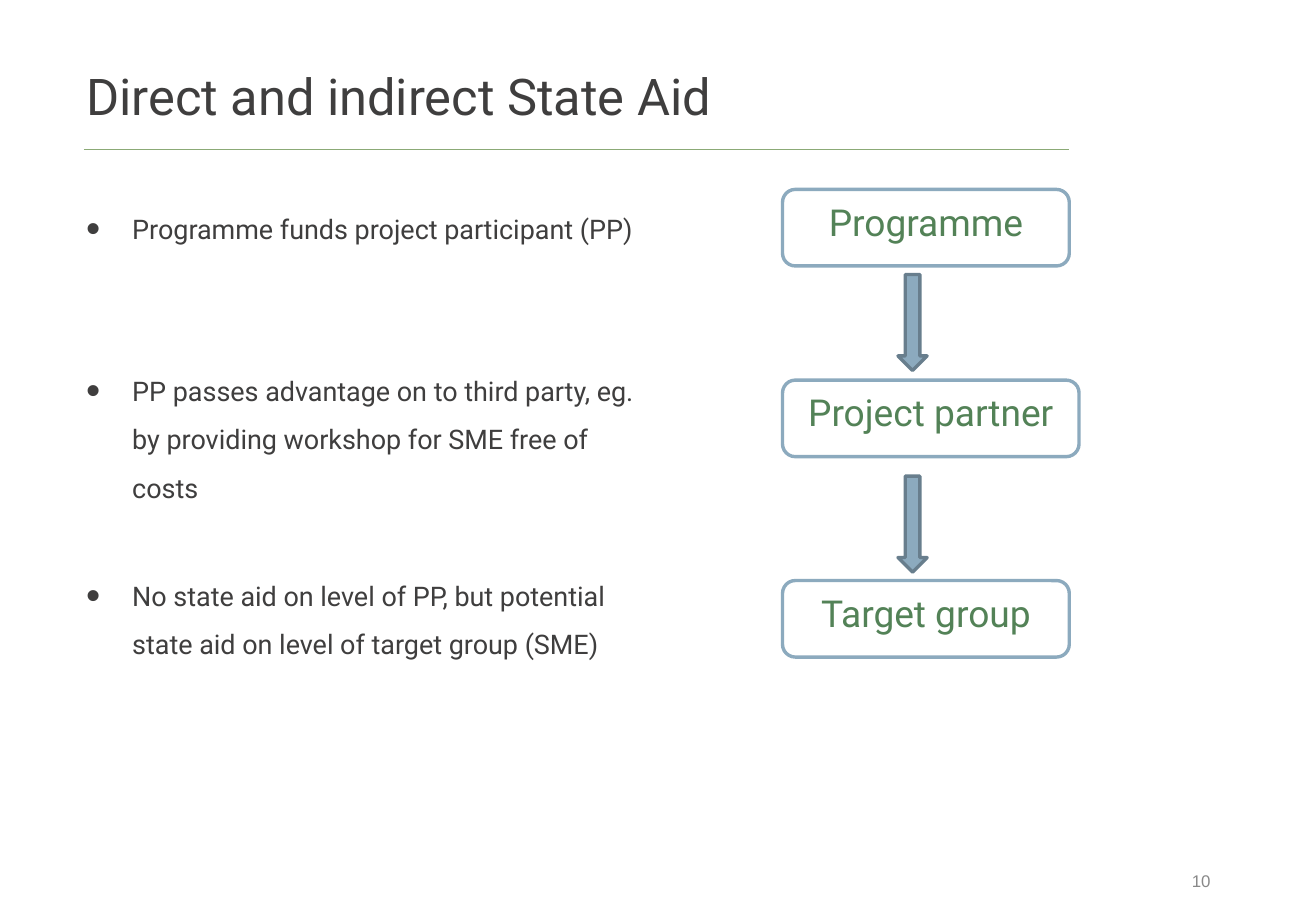
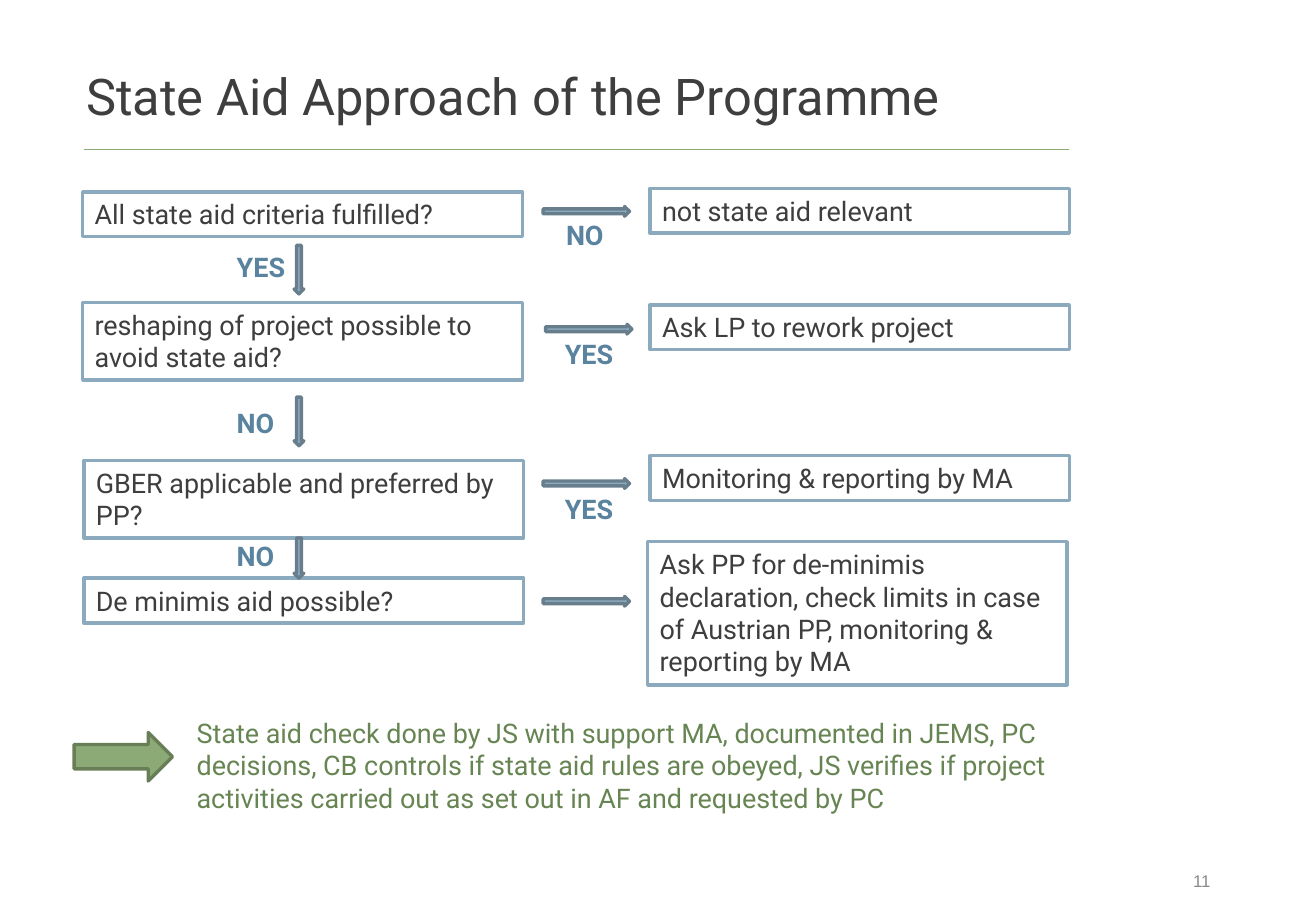
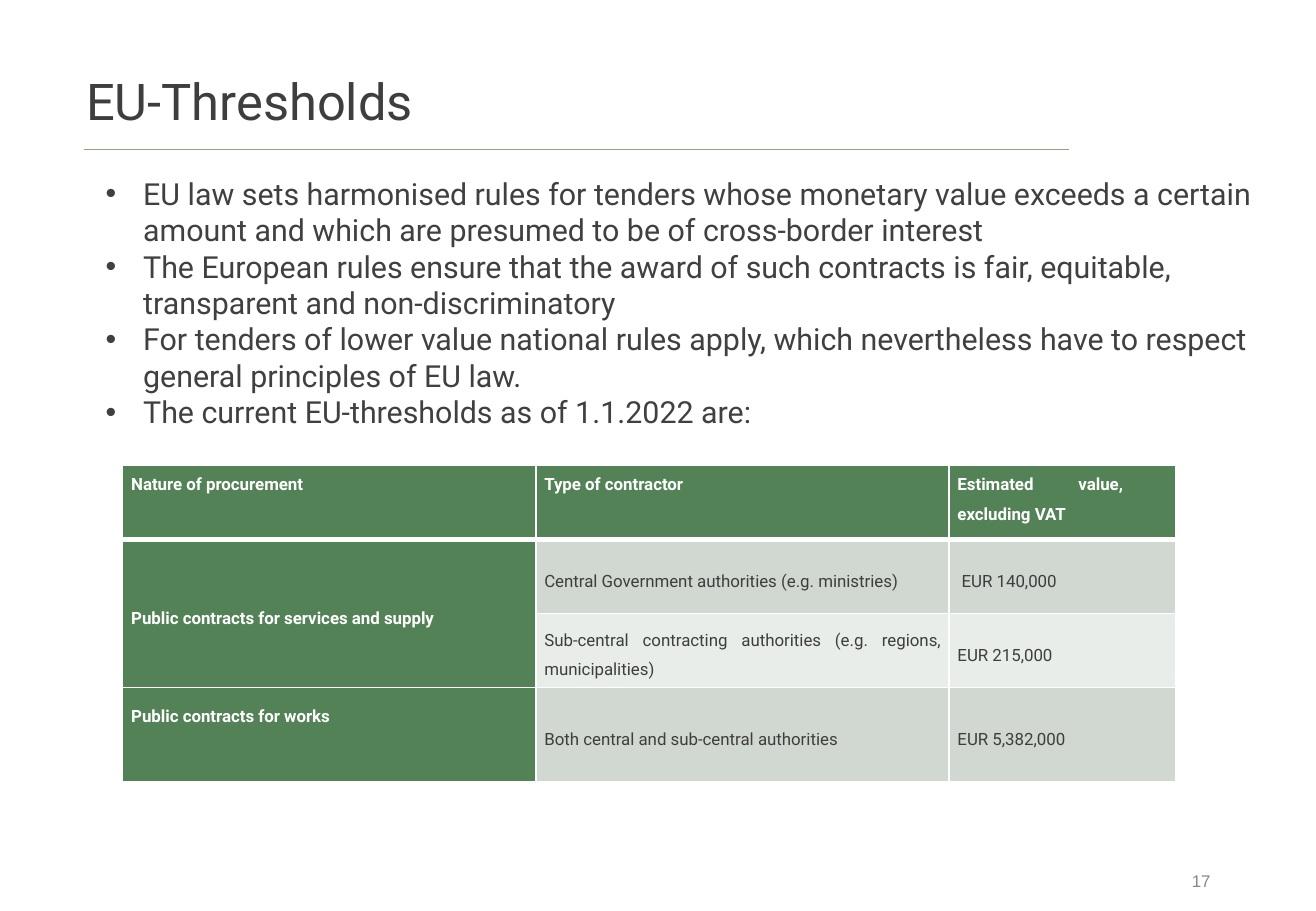
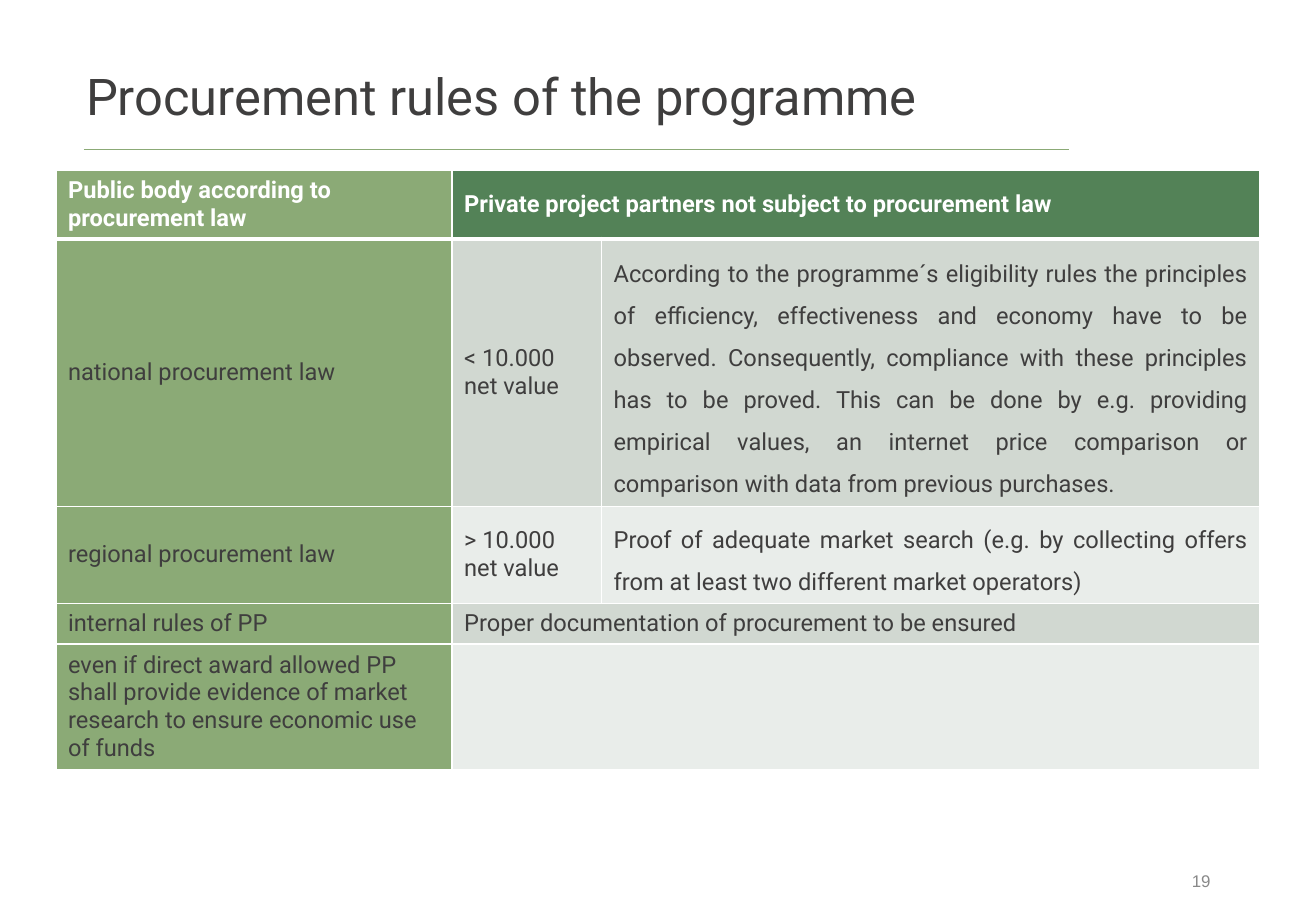
"""Build four slides on state aid and procurement rules."""
from copy import deepcopy

from lxml import etree
from pptx import Presentation
from pptx import util as u
from pptx.dml.color import RGBColor
from pptx.enum import shapes, text
from pptx.oxml.ns import qn

PX = 9144
HUES = {
    "white": "FFFFFF", "ink": "3F3E3E", "soft": "404040", "grey": "898989",
    "pine": "538257", "leaf": "8BAA76", "moss": "678553", "bark": "677E57",
    "sky": "8CAABE", "steel": "687E8D", "blue": "59839E",
    "mist": "D1D8D1", "pale": "E9EDEA",
}
ALIGN = {"l": text.PP_ALIGN.LEFT, "c": text.PP_ALIGN.CENTER,
         "r": text.PP_ALIGN.RIGHT, "j": text.PP_ALIGN.JUSTIFY}
ANCHOR = {"t": text.MSO_ANCHOR.TOP, "m": text.MSO_ANCHOR.MIDDLE,
          "b": text.MSO_ANCHOR.BOTTOM}
KIND = shapes.MSO_SHAPE
DOWN, RIGHT = KIND.DOWN_ARROW, KIND.RIGHT_ARROW

POINTS = [
    "Programme funds project participant (PP)",
    "PP passes advantage on to third party, eg. by providing workshop for SME free of costs",
    "No state aid on level of PP, but potential state aid on level of target group (SME)",
]
LEVELS = [("Programme", 156, 236), ("Project partner", 313, 244), ("Target group", 478, 236)]
LINKS = [226, 392]

STEPS = [
    ("All state aid criteria fulfilled?", (68, 158, 362, 37)),
    ("not state aid relevant", (535, 155, 345, 37)),
    ("reshaping of project possible to avoid state aid?", (68, 249, 362, 64)),
    ("Ask LP to rework project", (535, 251, 345, 37)),
    ("GBER applicable and preferred by PP?", (69, 379, 362, 64)),
    ("Monitoring & reporting by MA", (535, 375, 345, 37)),
    ("De minimis aid possible?", (69, 476, 362, 37)),
    ("Ask PP for de-minimis declaration, check limits in case of Austrian PP, "
     "monitoring & reporting by MA", (533, 446, 345, 118)),
]
ARROWS = [
    (DOWN, (242, 202, 8, 40)), (DOWN, (242, 327, 8, 40)), (DOWN, (242, 443, 8, 33)),
    (RIGHT, (447, 170, 71, 8)), (RIGHT, (449, 267, 71, 8)),
    (RIGHT, (447, 394, 71, 8)), (RIGHT, (447, 491, 71, 8)),
]
TAGS = [("YES", 185, 201), ("NO", 185, 330), ("NO", 185, 439),
        ("NO", 456, 175), ("YES", 455, 273), ("YES", 455, 401)]
CHECK = ("State aid check done by JS with support MA, documented in JEMS, PC decisions, "
         "CB controls if state aid rules are obeyed, JS verifies if project activities "
         "carried out as set out in AF and requested by PC")

RULES = [
    "EU law sets harmonised rules for tenders whose monetary value exceeds a certain "
    "amount and which are presumed to be of cross-border interest",
    "The European rules ensure that the award of such contracts is fair, equitable, "
    "transparent and non-discriminatory",
    "For tenders of lower value national rules apply, which nevertheless have to respect "
    "general principles of EU law.",
    "The current EU-thresholds as of 1.1.2022 are:",
]
SLIM = dict(size=10, align="j", gap=1.5, after=10, pad=(7, 0, 7, 0))
HEAD = dict(color="white", bold=True)
TOP = dict(HEAD, anchor="t")
LIMITS = [
    [("Nature of procurement", "pine", TOP), ("Type of contractor", "pine", TOP),
     ("Estimated value, \vexcluding VAT", "pine", TOP)],
    [("Public contracts for services and supply", "pine", HEAD),
     ("Central Government authorities (e.g. ministries)", "mist", {}),
     (" EUR 140,000", "mist", {})],
    [None, ("Sub-central contracting authorities (e.g. regions, municipalities)", "pale", {}),
     ("EUR 215,000", "pale", {})],
    [("Public contracts for works", "pine", dict(TOP, pad=(7, 8, 7, 0))),
     ("Both central and sub-central authorities", "mist", {}),
     ("EUR 5,382,000", "mist", {})],
]
WIDE = dict(align="j", gap=1.5, after=10)
BODIES = [
    [("Public body according to procurement law", "leaf", HEAD),
     ("Private project partners not subject to procurement law", "pine", HEAD), None],
    [("national procurement law", "leaf", {}), ("< 10.000 net value", "mist", {}),
     ("According to the programme´s eligibility rules the principles of efficiency, "
      "effectiveness and economy have to be observed. Consequently, compliance with these "
      "principles has to be proved. This can be done by e.g. providing empirical values, an "
      "internet price comparison or comparison with data from previous purchases.",
      "mist", WIDE)],
    [("regional procurement law", "leaf", {}), ("> 10.000 net value", "pale", {}),
     ("Proof of adequate market search (e.g. by collecting offers from at least two "
      "different market operators)", "pale", WIDE)],
    [("internal rules of PP", "leaf", {}),
     ("Proper documentation of procurement to be ensured", "mist", {}), None],
    [("even if direct award allowed PP shall provide evidence of market research to ensure "
      "economic use of funds", "leaf", {}), ("", "pale", {}), None],
]


def hue(name):
    """Return a named colour."""
    return RGBColor.from_string(HUES[name])


def scale(box):
    """Turn px lengths into EMU."""
    return [n * PX for n in box]


def dot(para, indent, size):
    """Give a paragraph a hanging bullet."""
    props = para._p.get_or_add_pPr()
    props.set("marL", str(indent * PX))
    props.set("indent", str(-indent * PX))
    for tag, key, val in (("buSzPct", "val", str(size * 1000)),
                          ("buFont", "typeface", "Arial"), ("buChar", "char", "•")):
        etree.SubElement(props, qn("a:" + tag)).set(key, val)


def write(frame, lines, size=16, color="ink", bold=False, font="Roboto", align="l",
          gap=1, after=0, before=(), indent=0, mark=100):
    """Fill a text frame with formatted paragraphs."""
    for i, line in enumerate(lines):
        para = frame.paragraphs[0] if i == 0 else frame.add_paragraph()
        if indent:
            dot(para, indent, mark)
        para.text = line
        para.alignment = ALIGN[align]
        para.line_spacing = gap
        para.space_after = u.Pt(after)
        if i and before:
            para.space_before = u.Pt(before[i])
        for run in para.runs:
            run.font.size, run.font.bold, run.font.name = u.Pt(size), bold, font
            run.font.color.rgb = hue(color)
        for br in para._p.findall(qn("a:br")):
            br.append(deepcopy(para.runs[0]._r.rPr))


def label(slide, box, lines, anchor="t", **form):
    """Add a wrapped text box."""
    frame = slide.shapes.add_textbox(*scale(box)).text_frame
    frame.word_wrap = True
    frame.vertical_anchor = ANCHOR[anchor]
    write(frame, lines, **form)


def block(slide, kind, box, fill, line, words="", **form):
    """Add an outlined preset shape."""
    shape = slide.shapes.add_shape(kind, *scale(box))
    shape.shadow.inherit = False
    shape.fill.solid()
    shape.fill.fore_color.rgb = hue(fill)
    shape.line.color.rgb = hue(line)
    shape.line.width = u.Pt(2)
    if words:
        shape.text_frame.word_wrap = True
        shape.text_frame.vertical_anchor = ANCHOR["t"]
        write(shape.text_frame, [words], **form)


def edge(cell, row):
    """Draw white borders, thick below the header."""
    props = cell._tc.get_or_add_tcPr()
    for i, side in enumerate("LRTB"):
        thick = (row, side) in ((0, "B"), (1, "T"))
        ln = etree.Element(qn("a:ln" + side), w=str(u.Pt(3 if thick else 1)))
        fill = etree.SubElement(ln, qn("a:solidFill"))
        etree.SubElement(fill, qn("a:srgbClr"), val=HUES["white"])
        props.insert(i, ln)


def grid(slide, left, top, cols, rows, data, merges, pad=(10, 5, 10, 5), **base):
    """Add a table with merged cells."""
    box = scale((left, top, sum(cols), sum(rows)))
    table = slide.shapes.add_table(len(rows), len(cols), *box).table
    for part, sizes in ((table.columns, cols), (table.rows, rows)):
        for item, size in zip(part, sizes):
            if part is table.columns:
                item.width = size * PX
            else:
                item.height = size * PX
    for start, end in merges:
        table.cell(*start).merge(table.cell(*end))
    for r, row in enumerate(data):
        for c, entry in enumerate(row):
            if entry is None:
                continue
            words, fill, extra = entry
            form = {"anchor": "m", "pad": pad, **base, **extra}
            cell = table.cell(r, c)
            cell.vertical_anchor = ANCHOR[form.pop("anchor")]
            (cell.margin_left, cell.margin_top,
             cell.margin_right, cell.margin_bottom) = scale(form.pop("pad"))
            cell.fill.solid()
            cell.fill.fore_color.rgb = hue(fill)
            edge(cell, r)
            write(cell.text_frame, [words], **form)


def start(deck, title, number, top=13, anchor="b"):
    """Add a slide with title, rule and number."""
    slide = deck.slides.add_slide(deck.slide_layouts[6])
    rule = slide.shapes.add_connector(shapes.MSO_CONNECTOR.STRAIGHT,
                                      *scale((69, 123, 880, 123)))
    rule.line.color.rgb = hue("leaf")
    rule.line.width = u.Pt(0.5)
    etree.SubElement(rule._element.spPr, qn("a:effectLst"))
    label(slide, (61, top, 762, 95), [title], anchor=anchor, size=30)
    label(slide, (948, 705, 58, 40), [str(number)], anchor="m", size=10,
          font="Arial", color="grey", align="r")
    return slide


def direct(deck):
    """Build the funding chain slide."""
    slide = start(deck, "Direct and indirect State Aid", 10)
    label(slide, (61, 157, 488, 419), POINTS, gap=1.5, before=(0, 67, 35),
          indent=38, mark=150)
    for words, top, wide in LEVELS:
        block(slide, KIND.ROUNDED_RECTANGLE, (644, top, wide, 63), "white", "sky",
              words, size=22, color="pine", align="c")
    for top in LINKS:
        block(slide, DOWN, (739, top, 24, 79), "sky", "steel")


def flow(deck):
    """Build the decision flow slide."""
    slide = start(deck, "State Aid Approach of the Programme", 11)
    for words, box in STEPS:
        block(slide, KIND.RECTANGLE, box, "white", "sky", words)
    label(slide, (152, 585, 780, 91), [CHECK], color="moss")
    block(slide, RIGHT, (61, 603, 81, 40), "leaf", "bark")
    for kind, box in ARROWS:
        block(slide, kind, box, "sky", "steel")
    for words, left, top in TAGS:
        label(slide, (left, top, 87, 37), [words], color="blue", bold=True)


def limits(deck):
    """Build the thresholds slide."""
    slide = start(deck, "EU-Thresholds", 17, top=53, anchor="t")
    grid(slide, 101, 383, (340, 340, 187), (61, 61, 61, 78), LIMITS,
         [((1, 0), (2, 0))], **SLIM)
    label(slide, (77, 139, 969, 222), RULES, size=18, color="soft", indent=31)


def bodies(deck):
    """Build the procurement rules slide."""
    slide = start(deck, "Procurement rules of the programme", 19)
    grid(slide, 46, 140, (326, 123, 542), (56, 216, 79, 33, 101), BODIES,
         [((r, 1), (r, 2)) for r in (0, 3, 4)], size=14)


def main():
    """Build and save the deck."""
    deck = Presentation()
    deck.slide_width, deck.slide_height = scale((1083, 750))
    for build in (direct, flow, limits, bodies):
        build(deck)
    deck.save("out.pptx")


if __name__ == "__main__":
    main()
